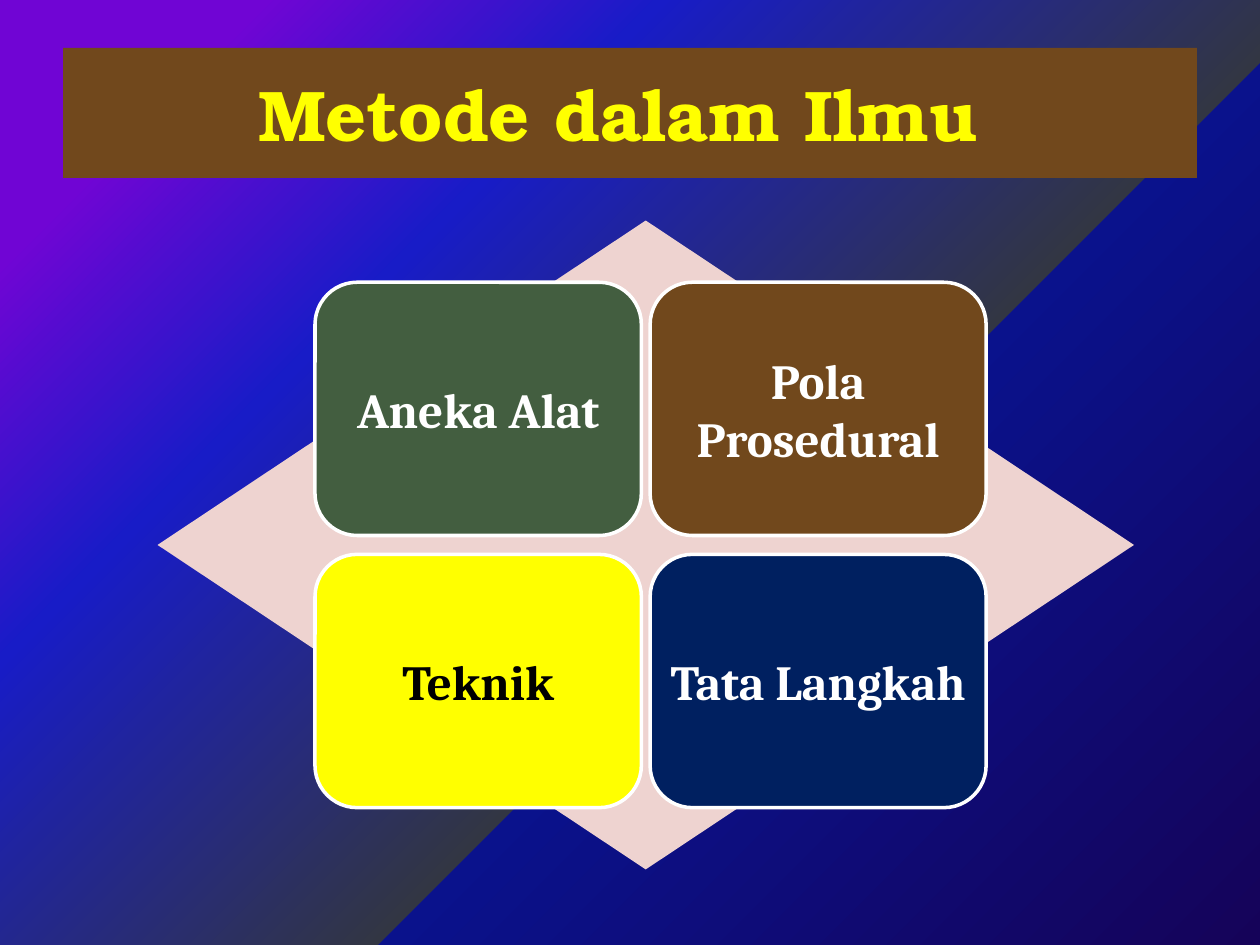
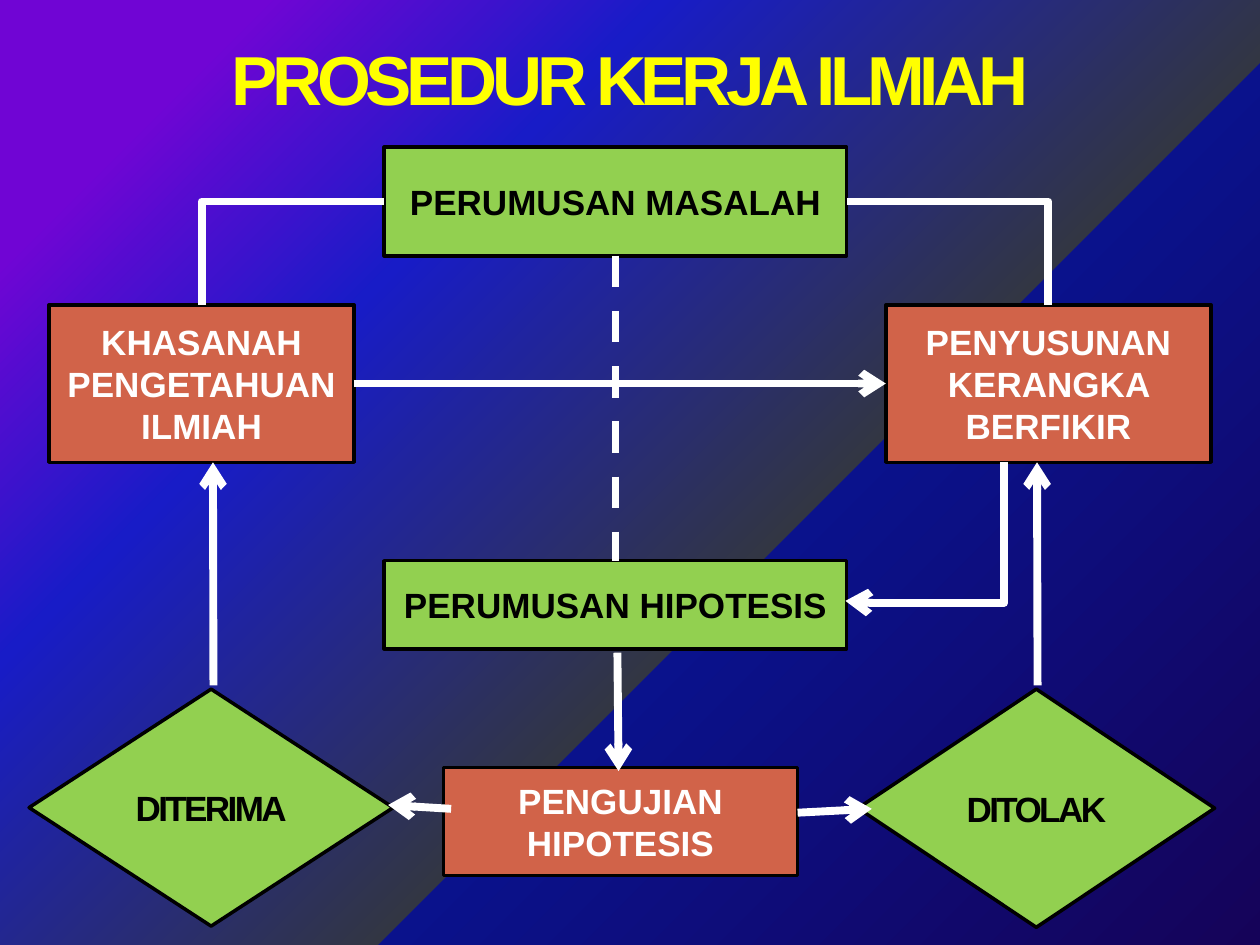
import pptx
import pptx.util
import pptx.dml.color
import pptx.enum.dml
import pptx.enum.shapes
import pptx.enum.text
import pptx.oxml
import pptx.oxml.ns
import lxml.etree

Pt = pptx.util.Pt
Kind = pptx.enum.shapes.MSO_SHAPE
Wire = pptx.enum.shapes.MSO_CONNECTOR
qn = pptx.oxml.ns.qn

# Content
HEX = {
    "yellow": "FFFF00", "white": "FFFFFF", "black": "000000",
    "brown": "71481C", "pink": "EED3D0", "moss": "435E40",
    "navy": "002060", "lime": "92D050", "rust": "D16349",
}
GLOW = [(0, "150359"), (40, "0A128C"), (40, "323643"), (70, "181CC7"), (88, "7005D4")]

TILES = [  # text, fill, ink; row by row
    ("Aneka Alat", "moss", "white"), ("Pola Prosedural", "brown", "white"),
    ("Teknik", "yellow", "black"), ("Tata Langkah", "navy", "white"),
]
COLS = [(180, 186.5), (371.5, 192)]  # left, width
ROWS = [161.3, 316.8]
TALL = 144.7

STEPS = {  # name: text, fill, ink, box
    "masalah": ("PERUMUSAN MASALAH", "lime", "black", (219.6, 84.2, 264.2, 61.9)),
    "dugaan": ("PERUMUSAN HIPOTESIS", "lime", "black", (219.6, 320.4, 264.2, 50.4)),
    "pikir": ("PENYUSUNAN KERANGKA BERFIKIR", "rust", "white", (506.2, 174.2, 185.8, 90)),
    "ilmu": ("KHASANAH PENGETAHUAN ILMIAH", "rust", "white", (28.1, 174.2, 174.2, 90)),
    "uji": ("PENGUJIAN HIPOTESIS", "rust", "white", (253.4, 438.5, 202.3, 61.9)),
}
ENDS = [  # text, box
    ("DITOLAK", (490.3, 393.8, 203.8, 136.1)),
    ("DITERIMA", (16.6, 393.8, 208.1, 135.4)),
]
ARROWS = [  # from, to
    ((352.8, 373), (353.5, 440.6)),
    ((455.8, 464.4), (498.2, 462.2)),
    ((257.8, 462.2), (221.8, 460)),
    ((592.9, 391.7), (592.6, 264.2)),
    ((122, 391.7), (121.7, 264.2)),
]


def tint(name):
    return pptx.dml.color.RGBColor.from_string(HEX[name])


def write(shape, text, size, face, ink, track=0):
    frame = shape.text_frame
    frame.text = text
    frame.word_wrap = True
    frame.auto_size = pptx.enum.text.MSO_AUTO_SIZE.NONE
    frame.vertical_anchor = pptx.enum.text.MSO_ANCHOR.MIDDLE
    para = frame.paragraphs[0]
    para.alignment = pptx.enum.text.PP_ALIGN.CENTER
    font = para.font
    font.size, font.name, font.bold = Pt(size), face, True
    font.color.rgb = tint(ink)
    if track:
        para.runs[0]._r.get_or_add_rPr().set("spc", str(round(track * 100)))


def place(shape, box):
    shape.left, shape.top, shape.width, shape.height = map(Pt, box)


def start(deck, text, box, size, face, track=0):
    slide = deck.slides.add_slide(deck.slide_layouts[5])
    place(slide.shapes.title, box)
    write(slide.shapes.title, text, size, face, "yellow", track)
    return slide


def block(slide, kind, box, fill, edge=None, width=2):
    shape = slide.shapes.add_shape(kind, *map(Pt, box))
    shape.shadow.inherit = False
    shape.fill.solid()
    shape.fill.fore_color.rgb = tint(fill)
    if edge:
        shape.line.color.rgb = tint(edge)
        shape.line.width = Pt(width)
    else:
        shape.line.fill.background()
    frame = shape.text_frame
    frame.margin_left = frame.margin_right = Pt(2)
    return shape


def wire(slide, a, b, head=False, kind=Wire.STRAIGHT):
    line = slide.shapes.add_connector(kind, *map(Pt, a + b))
    line.line.color.rgb = tint("white")
    line.line.width = Pt(4.5)
    props = line._element.spPr
    if head:
        tail = lxml.etree.SubElement(props.find(qn("a:ln")), qn("a:tailEnd"))
        tail.set("type", "arrow")
    lxml.etree.SubElement(props, qn("a:effectLst"))
    return line


def elbow(slide, a, b, head=False, bend=None):
    """Leaves a vertically: an upright box turned by 90 degrees about its middle."""
    (ax, ay), (bx, by) = a, b
    mx, my = (ax + bx) / 2, (ay + by) / 2
    dx, dy = (by - ay) / 2, (ax - bx) / 2
    line = wire(slide, (mx - dx, my - dy), (mx + dx, my + dy), head, Wire.ELBOW)
    props = line._element.spPr
    props.find(qn("a:xfrm")).set("rot", "5400000")
    form = props.find(qn("a:prstGeom"))
    if bend is None:
        form.set("prst", "bentConnector2")
    else:
        guide = lxml.etree.SubElement(form.find(qn("a:avLst")), qn("a:gd"))
        guide.set("name", "adj1")
        guide.set("fmla", f"val {round(bend * 100000)}")


def join(line, first, side, last, far):
    line.begin_connect(first, side)
    line.end_connect(last, far)


def backdrop(deck):
    fill = deck.slide_master.background.fill
    fill.gradient()
    grad = deck.slide_master._element.find(".//" + qn("p:bgPr")).find(qn("a:gradFill"))
    for part in list(grad):
        grad.remove(part)
    stops = lxml.etree.SubElement(grad, qn("a:gsLst"))
    for spot, shade in GLOW:
        stop = lxml.etree.SubElement(stops, qn("a:gs"), pos=str(spot * 1000))
        lxml.etree.SubElement(stop, qn("a:srgbClr"), val=shade)
    ring = lxml.etree.SubElement(grad, qn("a:path"))
    ring.set("path", "circle")
    lxml.etree.SubElement(ring, qn("a:fillToRect"), l="100000", t="100000")


def methods(deck):
    slide = start(deck, "Metode dalam Ilmu ", (36, 27.4, 648, 74.2), 41, "TeX Gyre Bonum")
    band = slide.shapes.title.fill
    band.solid()
    band.fore_color.rgb = tint("brown")
    block(slide, Kind.DIAMOND, (90, 126, 558, 370.8), "pink")
    for n, (text, fill, ink) in enumerate(TILES):
        row, col = divmod(n, 2)
        left, width = COLS[col]
        tile = block(slide, Kind.ROUNDED_RECTANGLE, (left, ROWS[row], width, TALL), fill, "white")
        write(tile, text, 28, "Cambria", ink)


def steps(deck):
    slide = start(deck, "PROSEDUR KERJA ILMIAH", (36, 16.6, 648, 56.2), 39.6, "Arial", -3)
    # Boxes and outcomes
    made = {}
    for name, (text, fill, ink, box) in STEPS.items():
        made[name] = block(slide, Kind.RECTANGLE, box, fill, "black")
        write(made[name], text, 20, "Arial", ink)
    made["masalah"].line.width = Pt(2.25)
    for text, box in ENDS:
        write(block(slide, Kind.DIAMOND, box, "lime", "black"), text, 20, "Arial", "black", -1.5)

    # Joined lines
    dash = wire(slide, (351.7, 146.1), (351.7, 320.4))
    dash.line.dash_style = pptx.enum.dml.MSO_LINE.DASH
    join(dash, made["masalah"], 2, made["dugaan"], 0)
    link = wire(slide, (202.3, 219.2), (506.2, 219.2), True)
    join(link, made["ilmu"], 3, made["pikir"], 1)

    # Elbows from the side boxes, then free arrows
    left, top, width, height = STEPS["masalah"][3]
    for name, edge in (("ilmu", left), ("pikir", left + width)):
        x, y, w, h = STEPS[name][3]
        elbow(slide, (x + w / 2, y), (edge, top + height / 2))
    for a, b in ARROWS:
        wire(slide, a, b, True)
    elbow(slide, (573.8, 264.2), (483.1, 343.4), True, 1.014)


def main():
    deck = pptx.Presentation()
    deck.slide_width, deck.slide_height = Pt(720), Pt(540)
    backdrop(deck)
    methods(deck)
    steps(deck)
    deck.save("out.pptx")


if __name__ == "__main__":
    main()
